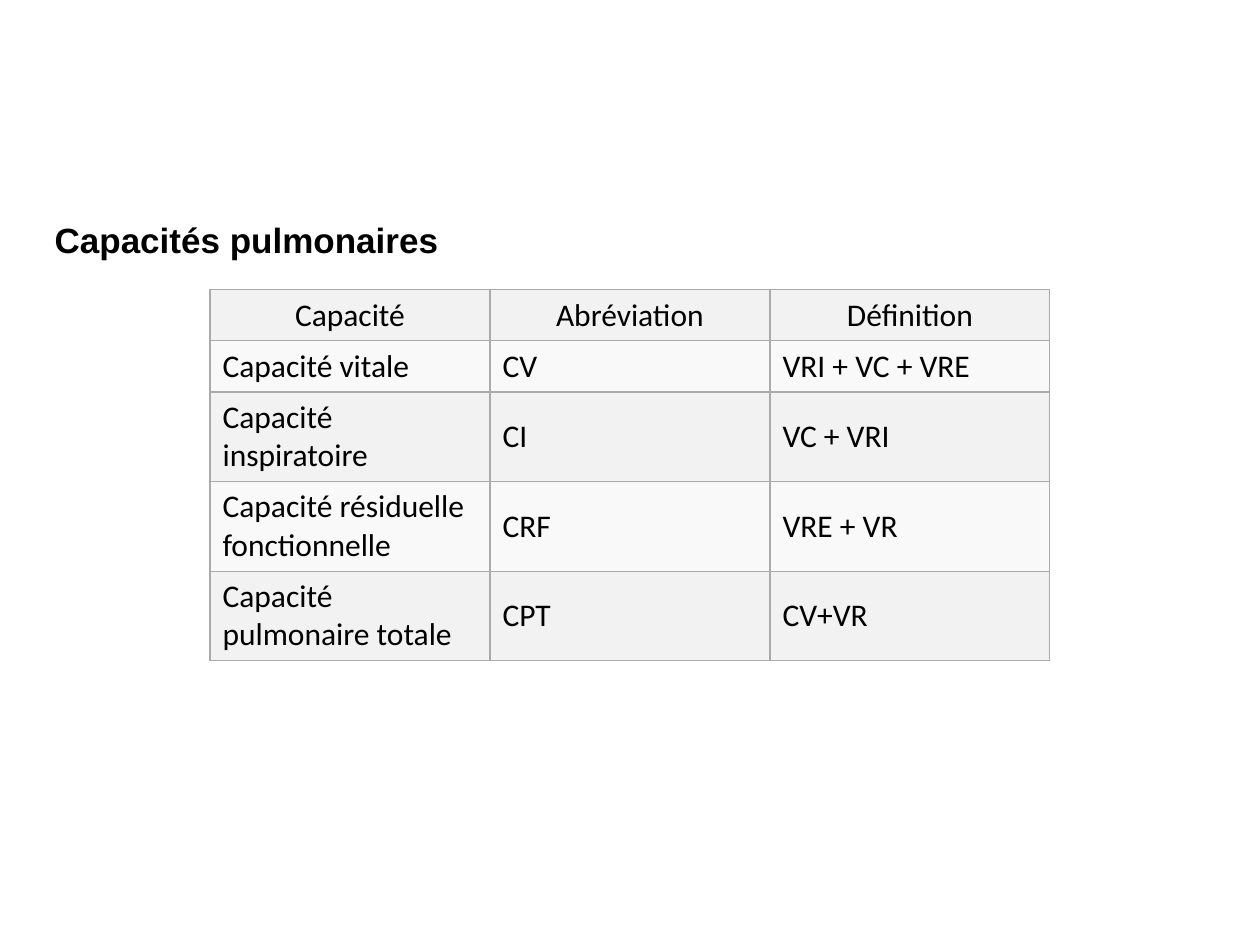
from lxml import etree
from pptx import Presentation
from pptx.dml.color import RGBColor
from pptx.enum import text
from pptx.oxml.ns import qn
from pptx.util import Pt

TITLE = "Capacités pulmonaires"
ROWS = [
    ("Capacité", "Abréviation", "Définition"),
    ("Capacité vitale", "CV", "VRI + VC + VRE"),
    ("Capacité inspiratoire", "CI", "VC + VRI"),
    ("Capacité résiduelle fonctionnelle", "CRF", "VRE + VR"),
    ("Capacité pulmonaire totale", "CPT", "CV+VR"),
]
HEIGHTS = [29.2, 29.2, 51.2, 51.2, 51.2]
COLORS = {"ink": "000000", "line": "AAAAAA", "even": "F2F2F2", "odd": "F9F9F9"}
HEAD = {"name": "Arial", "size": Pt(20), "bold": True}
BODY = {"name": "Calibri", "size": Pt(18), "bold": False}
FRAME = {
    "word_wrap": True,
    "vertical_anchor": text.MSO_ANCHOR.BOTTOM,
    "margin_left": 0, "margin_right": 0, "margin_top": 0,
    "margin_bottom": Pt(39),
}
LEFT, TOP, WIDTH = 120, 165.6, 480


def write(para, words, font):
    run = para.add_run()
    run.text = words
    for key, value in font.items():
        setattr(run.font, key, value)
    run.font.color.rgb = RGBColor.from_string(COLORS["ink"])


def border(cell):
    props = cell._tc.get_or_add_tcPr()
    for i, side in enumerate(("lnL", "lnR", "lnT", "lnB")):
        line = etree.Element(qn("a:" + side), w=str(Pt(0.75)))
        fill = etree.SubElement(line, qn("a:solidFill"))
        etree.SubElement(fill, qn("a:srgbClr"), val=COLORS["line"])
        props.insert(i, line)


def add_title(slide):
    box = slide.shapes.add_textbox(Pt(31.2), Pt(24.5), Pt(251.3), Pt(156.2))
    frame = box.text_frame
    for key, value in FRAME.items():
        setattr(frame, key, value)
    write(frame.paragraphs[0], TITLE, HEAD)


def add_grid(slide):
    cols = len(ROWS[0])
    grid = slide.shapes.add_table(
        len(ROWS), cols, Pt(LEFT), Pt(TOP), Pt(WIDTH), Pt(sum(HEIGHTS))).table
    for col in grid.columns:
        col.width = Pt(WIDTH / cols)
    for r, (row, high) in enumerate(zip(ROWS, HEIGHTS)):
        grid.rows[r].height = Pt(high)
        for c, words in enumerate(row):
            cell = grid.cell(r, c)
            cell.vertical_anchor = text.MSO_ANCHOR.MIDDLE
            cell.fill.solid()
            shade = COLORS["odd" if r % 2 else "even"]
            cell.fill.fore_color.rgb = RGBColor.from_string(shade)
            border(cell)
            para = cell.text_frame.paragraphs[0]
            para.alignment = text.PP_ALIGN.LEFT if r else text.PP_ALIGN.CENTER
            write(para, words, BODY)


def main():
    deck = Presentation()
    deck.slide_width, deck.slide_height = Pt(720), Pt(540)
    slide = deck.slides.add_slide(deck.slide_layouts[6])
    add_grid(slide)
    add_title(slide)
    deck.save("out.pptx")


if __name__ == "__main__":
    main()
